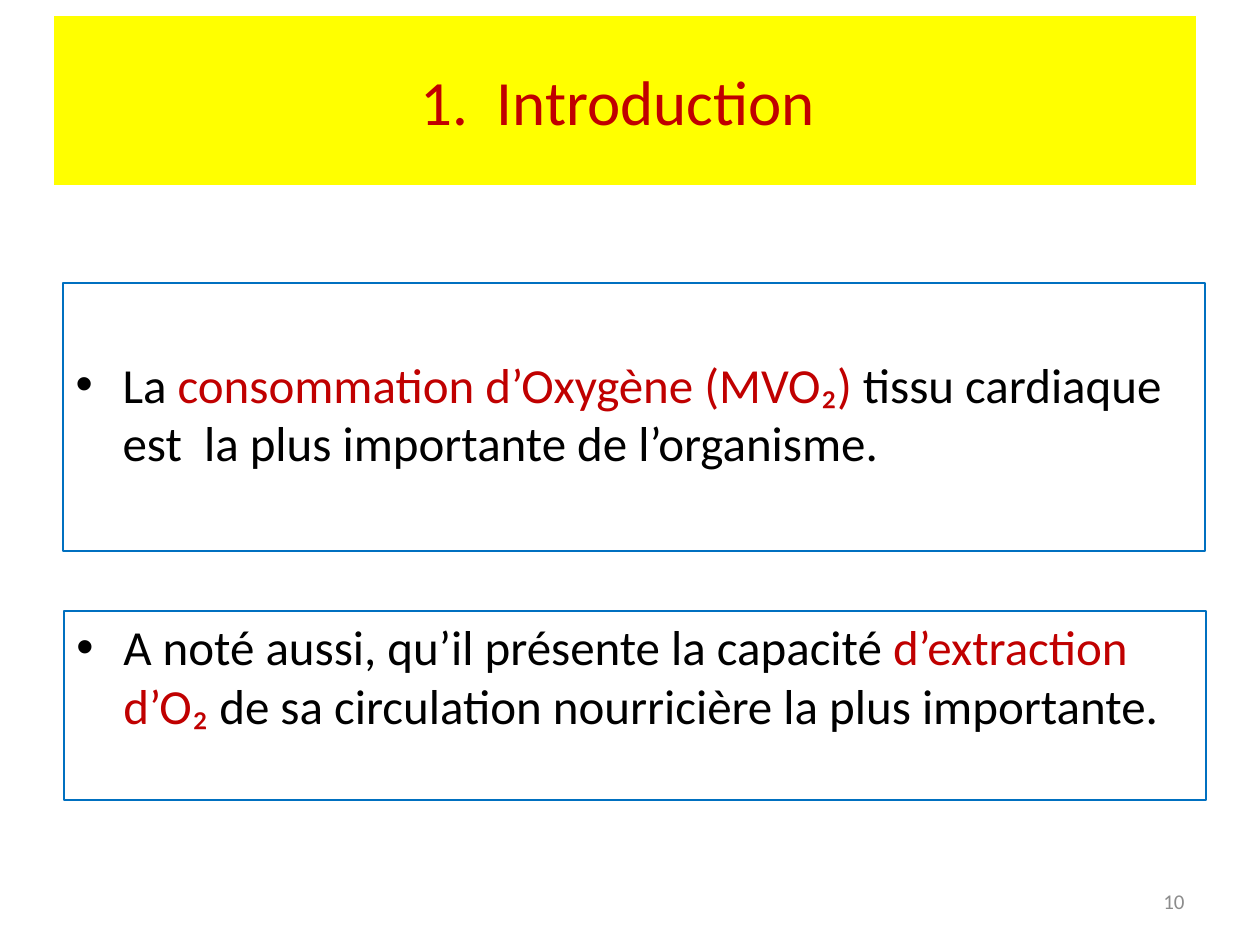
from dataclasses import dataclass

from lxml.etree import SubElement
from pptx import Presentation
from pptx.dml.color import RGBColor
from pptx.enum.text import MSO_ANCHOR, MSO_AUTO_SIZE, PP_ALIGN
from pptx.oxml.ns import qn
from pptx.util import Emu, Pt


@dataclass(frozen=True)
class Theme:
    font: str = "Calibri"
    ink: str = "000000"
    accent: str = "C00000"
    band: str = "FFFF00"
    edge: str = "0070C0"
    muted: str = "8C8C8C"
    title: int = 36
    body: int = 28
    small: int = 12


THEME = Theme()
PX = 914400 // 126
PAD = 6
INDENT = 47

TITLE = "1.  Introduction "
NUMBER = "10"
# Each point is a list of (text, colour) pieces.
OXYGEN = [
    ("La ", THEME.ink),
    ("consommation d’Oxygène (MVO₂) ", THEME.accent),
    ("tissu cardiaque est  la plus importante de l’organisme.", THEME.ink),
]
EXTRACT = [
    ("A noté aussi, qu’il présente la capacité ", THEME.ink),
    ("d’extraction d’O₂ ", THEME.accent),
    ("de sa circulation nourricière la plus importante.", THEME.ink),
]

# left, top, width, height in px
TITLE_BOX = (54, 16, 1142, 169)
OXYGEN_BOX = (63, 283, 1142, 268)
EXTRACT_BOX = (64, 611, 1142, 189)
NUMBER_BOX = (903, 876, 294, 50)


def px(n):
    return Emu(n * PX)


def place(shape, box):
    shape.left, shape.top, shape.width, shape.height = map(px, box)


def style(run, size, color):
    run.font.name = THEME.font
    run.font.size = Pt(size)
    run.font.color.rgb = RGBColor.from_string(color)


def label(shape, text, size, color, align):
    """Put one centred-in-height line of text in a shape."""
    frame = shape.text_frame
    frame.text = text
    frame.word_wrap = True
    frame.auto_size = MSO_AUTO_SIZE.NONE
    frame.vertical_anchor = MSO_ANCHOR.MIDDLE
    para = frame.paragraphs[0]
    para.alignment = align
    style(para.runs[0], size, color)


def point(shape, pieces, top=PAD):
    """Fill an outlined box with one bulleted point."""
    shape.line.color.rgb = RGBColor.from_string(THEME.edge)
    shape.line.width = Pt(0.75)
    frame = shape.text_frame
    frame.word_wrap = True
    frame.auto_size = MSO_AUTO_SIZE.NONE
    frame.vertical_anchor = MSO_ANCHOR.TOP
    frame.margin_top = px(top)
    para = frame.paragraphs[0]
    para.space_before = Pt(THEME.body * 0.2)
    props = para._p.get_or_add_pPr()
    props.set("marL", str(px(INDENT)))
    props.set("indent", str(-px(INDENT)))
    SubElement(props, qn("a:buFont")).set("typeface", "Arial")
    SubElement(props, qn("a:buChar")).set("char", "•")
    for text, color in pieces:
        run = para.add_run()
        run.text = text
        style(run, THEME.body, color)


def main():
    deck = Presentation()
    deck.slide_width, deck.slide_height = px(1260), px(945)
    slide = deck.slides.add_slide(deck.slide_layouts[1])
    shapes = slide.shapes

    title = shapes.title
    place(title, TITLE_BOX)
    title.fill.solid()
    title.fill.fore_color.rgb = RGBColor.from_string(THEME.band)
    label(title, TITLE, THEME.title, THEME.accent, PP_ALIGN.CENTER)

    body = slide.placeholders[1]
    place(body, OXYGEN_BOX)
    point(body, OXYGEN, top=71)

    point(shapes.add_textbox(*map(px, EXTRACT_BOX)), EXTRACT)

    number = shapes.add_textbox(*map(px, NUMBER_BOX))
    label(number, NUMBER, THEME.small, THEME.muted, PP_ALIGN.RIGHT)

    deck.save("out.pptx")


if __name__ == "__main__":
    main()
